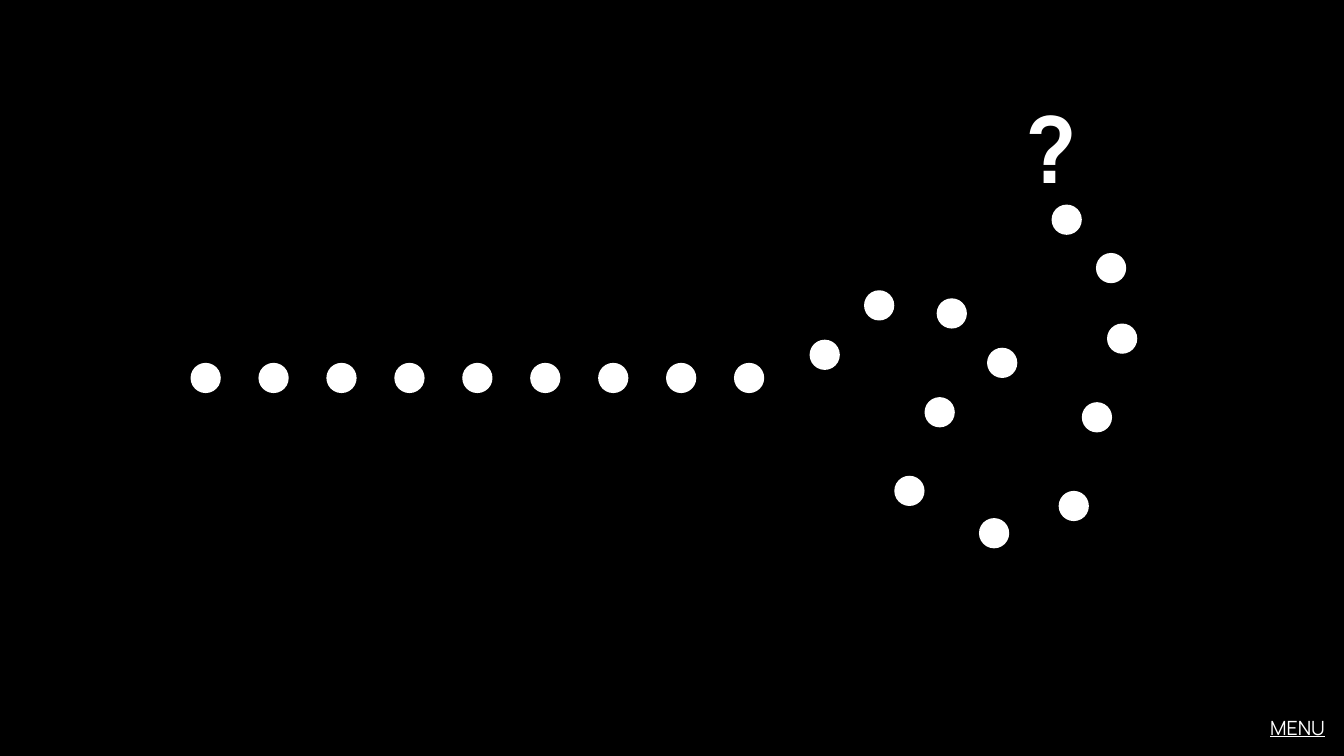
"""Build a slide with a dotted trail that loops towards a question mark."""
from pptx import Presentation
from pptx.dml.color import RGBColor
from pptx.enum import shapes, text
from pptx.util import Inches, Pt

FONT = "Manrope"
BLACK, WHITE = "000000", "FFFFFF"

DOT_SIZE = 0.3
ROW_START, ROW_END, ROW_TOP, ROW_COUNT = 1.89, 7.28, 3.6, 9
LOOP = [
    (8.03, 3.37), (8.57, 2.88), (9.29, 2.96), (9.79, 3.45),
    (9.17, 3.94), (8.87, 4.72), (9.71, 5.14), (10.5, 4.87),
    (10.73, 3.99), (10.98, 3.21), (10.87, 2.51), (10.43, 2.03),
]
LABELS = [
    {"words": "MENU", "box": (12.32, 7.05, 0.92, 0.34), "size": 14,
     "align": text.PP_ALIGN.RIGHT, "bold": False, "underline": True},
    {"words": "?", "box": (10.01, 0.85, 0.83, 1.21), "size": 66,
     "align": text.PP_ALIGN.CENTER, "bold": True, "underline": False},
]


def paint(fill, color):
    fill.solid()
    fill.fore_color.rgb = RGBColor.from_string(color)


def add_dot(slide, left, top):
    dot = slide.shapes.add_shape(
        shapes.MSO_SHAPE.OVAL, *map(Inches, (left, top, DOT_SIZE, DOT_SIZE)))
    dot.shadow.inherit = False
    paint(dot.fill, WHITE)
    dot.line.fill.background()


def add_label(slide, label):
    frame = slide.shapes.add_textbox(*map(Inches, label["box"])).text_frame
    frame.word_wrap = True
    frame.auto_size = text.MSO_AUTO_SIZE.SHAPE_TO_FIT_TEXT
    frame.text = label["words"]
    paragraph = frame.paragraphs[0]
    paragraph.alignment = label["align"]
    font = paragraph.runs[0].font
    font.name, font.size = FONT, Pt(label["size"])
    font.bold, font.underline = label["bold"], label["underline"]
    paint(font.fill, WHITE)


def main():
    deck = Presentation()
    deck.slide_width, deck.slide_height = Inches(13.33), Inches(7.5)
    slide = deck.slides.add_slide(deck.slide_layouts.get_by_name("Blank"))
    paint(slide.background.fill, BLACK)

    pitch = (ROW_END - ROW_START) / (ROW_COUNT - 1)
    row = [(ROW_START + i * pitch, ROW_TOP) for i in range(ROW_COUNT)]
    for left, top in row + LOOP:
        add_dot(slide, left, top)
    for label in LABELS:
        add_label(slide, label)
    deck.save("out.pptx")


if __name__ == "__main__":
    main()
